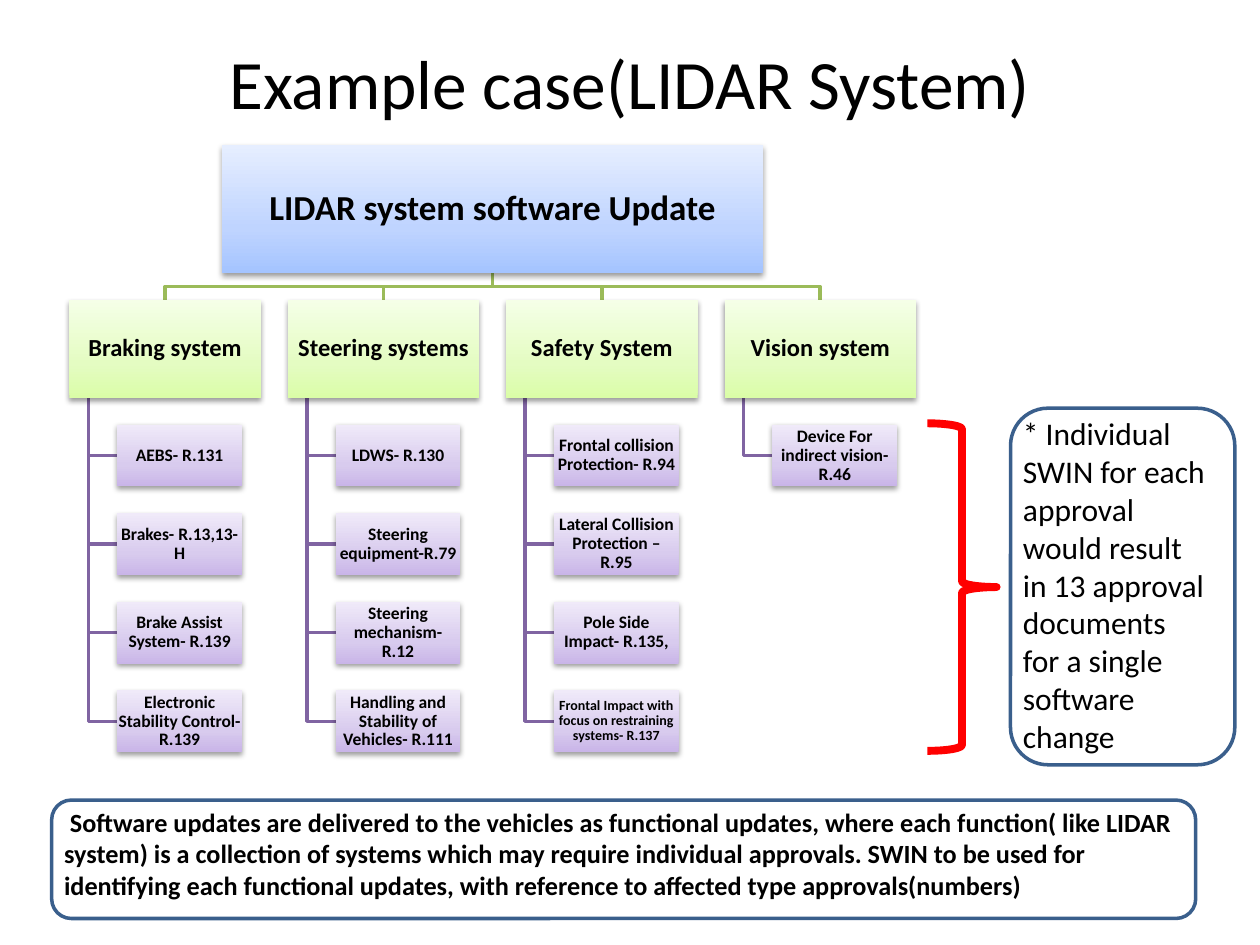
import dataclasses
import typing

import lxml.etree
import pptx
import pptx.dml.color
import pptx.enum.shapes
import pptx.enum.text
import pptx.oxml
import pptx.oxml.ns
import pptx.util

RGB = pptx.dml.color.RGBColor
KIND = pptx.enum.shapes.MSO_SHAPE
ALIGN = pptx.enum.text.PP_ALIGN
ANCHOR = pptx.enum.text.MSO_ANCHOR
INCH = pptx.util.Inches

BLACK = RGB(0x00, 0x00, 0x00)
RED = RGB(0xFF, 0x00, 0x00)
NAVY = RGB(0x3A, 0x5F, 0x8C)
GREEN = RGB(0x9B, 0xBB, 0x59)
PURPLE = RGB(0x80, 0x64, 0xA2)
BLUES = (RGB(0xA4, 0xC4, 0xFF), RGB(0xBF, 0xD4, 0xFF), RGB(0xE6, 0xEE, 0xFF))
LIMES = (RGB(0xDA, 0xFD, 0xA7), RGB(0xE4, 0xFC, 0xC2), RGB(0xF5, 0xFF, 0xE7))
LILACS = (RGB(0xC9, 0xB5, 0xE8), RGB(0xD8, 0xCB, 0xEE), RGB(0xF0, 0xEA, 0xF9))
STOPS = (0, 35, 100)
FONT = "Calibri"
PAD = 0.01
COL = 5.2 / 3
ROW = 2.11 / 3
XMLNS = 'xmlns:a="http://schemas.openxmlformats.org/drawingml/2006/main"'


@dataclasses.dataclass(frozen=True)
class Box:
    left: float
    top: float
    width: float
    height: float

    @property
    def mid(self) -> float:
        return self.left + self.width / 2

    @property
    def base(self) -> float:
        return self.top + self.height

    def shift(self, col: int = 0, row: int = 0) -> "Box":
        return dataclasses.replace(
            self, left=self.left + col * COL, top=self.top + row * ROW)

    def emu(self) -> list[int]:
        return [INCH(v) for v in (self.left, self.top, self.width, self.height)]


@dataclasses.dataclass(frozen=True)
class Leaf:
    text: str
    size: float = 10


@dataclasses.dataclass(frozen=True)
class Branch:
    text: str
    leaves: tuple[Leaf, ...]


TITLE = Box(0.5, 0.3, 9, 0.69)
ROOT = Box(1.76, 1.15, 4.3, 1.02)
HEAD = Box(0.55, 2.38, 1.52, 0.78)
LEAF = Box(0.93, 3.37, 0.99, 0.49)
BRACE = Box(7.36, 3.36, 0.55, 2.6)
NOTE = Box(8.02, 3.24, 1.78, 2.83)
FOOT = Box(0.41, 6.35, 9.08, 0.94)

BRANCHES = (
    Branch("Braking system", (
        Leaf("AEBS- R.131"),
        Leaf("Brakes- R.13,13-H"),
        Leaf("Brake Assist System- R.139"),
        Leaf("Electronic Stability Control- R.139"))),
    Branch("Steering systems", (
        Leaf("LDWS- R.130"),
        Leaf("Steering equipment-R.79"),
        Leaf("Steering mechanism- R.12"),
        Leaf("Handling and Stability of Vehicles- R.111"))),
    Branch("Safety System", (
        Leaf("Frontal collision Protection- R.94"),
        Leaf("Lateral Collision Protection – R.95"),
        Leaf("Pole Side Impact- R.135,"),
        Leaf("Frontal Impact with focus on restraining systems- R.137", 8))),
    Branch("Vision system", (
        Leaf("Device For indirect vision- R.46"),)),
)


def write(shape: typing.Any, text: str, *, size: float, bold: bool = False,
          align: typing.Any = ALIGN.LEFT, anchor: typing.Any = ANCHOR.TOP,
          pad: typing.Optional[float] = None, space: float = 1.0) -> None:
    frame = shape.text_frame
    frame.word_wrap = True
    frame.vertical_anchor = anchor
    if pad is not None:
        frame.margin_left = frame.margin_right = INCH(pad)
        frame.margin_top = frame.margin_bottom = INCH(pad)
    para = frame.paragraphs[0]
    para.alignment = align
    para.line_spacing = space
    run = para.add_run()
    run.text = text
    run.font.name = FONT
    run.font.size = pptx.util.Pt(size)
    run.font.bold = bold
    run.font.color.rgb = BLACK


def label(slide: typing.Any, box: Box, text: str, **style: typing.Any) -> None:
    write(slide.shapes.add_textbox(*box.emu()), text, **style)


def shade(shape: typing.Any, tones: tuple[RGB, ...]) -> None:
    shape.fill.gradient()
    grad = shape.fill._xPr.find(pptx.oxml.ns.qn("a:gradFill"))
    marks = "".join(
        f'<a:gs pos="{stop * 1000}"><a:srgbClr val="{tone}"/></a:gs>'
        for stop, tone in zip(STOPS, tones))
    fill = pptx.oxml.parse_xml(
        f'<a:gradFill {XMLNS} rotWithShape="1"><a:gsLst>{marks}</a:gsLst>'
        '<a:lin ang="16200000" scaled="0"/></a:gradFill>')
    grad.getparent().replace(grad, fill)
    shape.shadow.inherit = False
    glow = shape.fill._xPr.find(pptx.oxml.ns.qn("a:effectLst"))
    glow.append(pptx.oxml.parse_xml(
        f'<a:outerShdw {XMLNS} blurRad="40000" dist="20000" dir="5400000" '
        'rotWithShape="0"><a:srgbClr val="000000"><a:alpha val="38000"/>'
        '</a:srgbClr></a:outerShdw>'))


def card(slide: typing.Any, box: Box, text: str, size: float,
         tones: tuple[RGB, ...]) -> None:
    shape = slide.shapes.add_shape(KIND.RECTANGLE, *box.emu())
    shade(shape, tones)
    shape.line.fill.background()
    write(shape, text, size=size, bold=True, align=ALIGN.CENTER,
          anchor=ANCHOR.MIDDLE, pad=PAD, space=0.9)


def stroke(shape: typing.Any, color: RGB, width: float) -> None:
    shape.shadow.inherit = False
    shape.fill.background()
    shape.line.color.rgb = color
    shape.line.width = pptx.util.Pt(width)


def trace(slide: typing.Any, points: list[tuple[float, float]],
          color: RGB) -> None:
    start, *rest = [(INCH(x), INCH(y)) for x, y in points]
    pen = slide.shapes.build_freeform(*start)
    pen.add_line_segments(rest, close=False)
    stroke(pen.convert_to_shape(), color, 2)


def frame(slide: typing.Any, kind: typing.Any, box: Box, color: RGB,
          width: float) -> None:
    stroke(slide.shapes.add_shape(kind, *box.emu()), color, width)


def links(slide: typing.Any) -> None:
    bus = (ROOT.base + HEAD.top) / 2
    for col, branch in enumerate(BRANCHES):
        head = HEAD.shift(col)
        trace(slide, [(ROOT.mid, ROOT.base), (ROOT.mid, bus),
                      (head.mid, bus), (head.mid, head.top)], GREEN)
        stem = head.left + head.width / 10
        for row in range(len(branch.leaves)):
            leaf = LEAF.shift(col, row)
            level = leaf.top + leaf.height / 2
            trace(slide, [(stem, head.base), (stem, level),
                          (leaf.left, level)], PURPLE)


def cards(slide: typing.Any) -> None:
    card(slide, ROOT, "LIDAR system software Update", 20, BLUES)
    for col, branch in enumerate(BRANCHES):
        card(slide, HEAD.shift(col), branch.text, 14, LIMES)
        for row, leaf in enumerate(branch.leaves):
            card(slide, LEAF.shift(col, row), leaf.text, leaf.size, LILACS)


def main() -> None:
    deck = pptx.Presentation()
    deck.slide_width, deck.slide_height = INCH(10), INCH(7.5)
    slide = deck.slides.add_slide(deck.slide_layouts[6])
    label(slide, TITLE, "Example case(LIDAR System)", size=39.6,
          align=ALIGN.CENTER, anchor=ANCHOR.MIDDLE)
    links(slide)
    cards(slide)
    frame(slide, KIND.RIGHT_BRACE, BRACE, RED, 4.5)
    label(slide, dataclasses.replace(NOTE, width=1.65),
          "* Individual SWIN for each approval would result in 13 approval "
          "documents for a single software change", size=18)
    frame(slide, KIND.ROUNDED_RECTANGLE, NOTE, NAVY, 2)
    frame(slide, KIND.ROUNDED_RECTANGLE, FOOT, NAVY, 2)
    label(slide, dataclasses.replace(FOOT, height=0.86),
          " Software updates are delivered to the vehicles as functional "
          "updates, where each function( like LIDAR system) is a collection "
          "of systems which may require individual approvals. SWIN to be used "
          "for identifying each functional updates, with reference to "
          "affected type approvals(numbers)", size=15, bold=True)
    deck.save("out.pptx")


if __name__ == "__main__":
    main()
